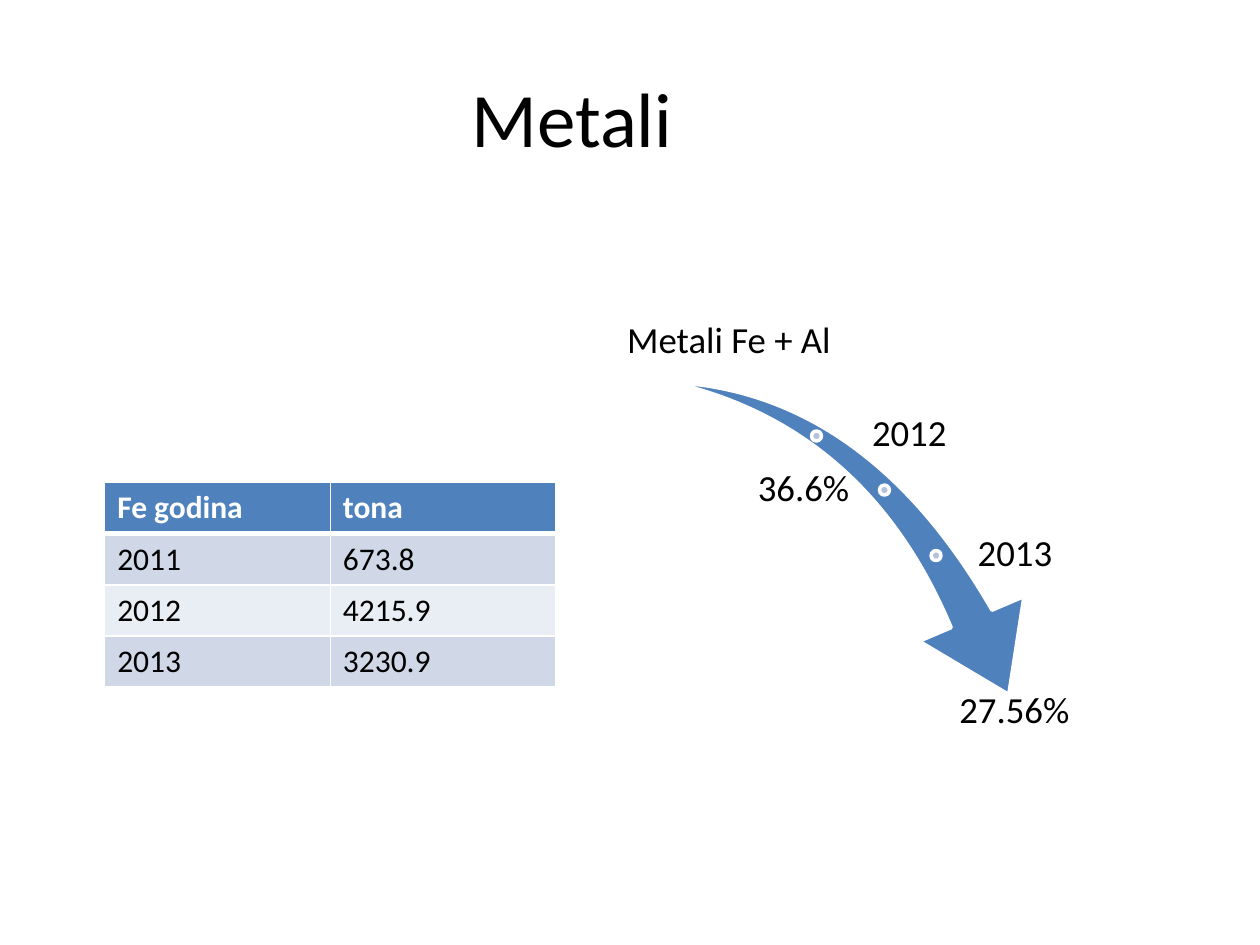
from lxml import etree
from pptx import Presentation
from pptx.dml.color import RGBColor
from pptx.enum.shapes import MSO_SHAPE as Shape
from pptx.enum.text import MSO_ANCHOR as Anchor, PP_ALIGN as Align
from pptx.oxml.ns import qn
from pptx.util import Cm, Pt

THEME = {
    "font": "Calibri",
    "title": 44, "label": 21, "cell": 18,
    "text": "000000", "white": "FFFFFF",
    "blue": "4F81BD", "dot": "B3C1DB",
    "bands": ("D0D8E8", "E9EDF4"),
}

TITLE = "Metali"
TABLE_ROWS = [
    ("Fe godina", "tona"),
    ("2011", "673.8"),
    ("2012", "4215.9"),
    ("2013", "3230.9"),
]
# Places are left, top, width, height in centimetres.
TITLE_PLACE = (1.27, 0.76, 20.52, 3.18)
TABLE_PLACE = (2.11, 9.73, 9.1, 4.12)
ARROW_PLACE = (13.36, 7.95, 7.98, 5.56)
ARROW_ROTATION = 73.3
ARROW_ADJUSTMENTS = (0.16, 0.31)
DOT_SIZE = 0.2
DOTS = [(16.36, 8.69), (17.73, 9.78), (18.77, 11.1)]
LABELS = [
    ("Metali Fe + Al", (10.44, 6.35, 8.51, 1.02), Align.CENTER, Anchor.BOTTOM),
    ("2012", (17.5, 8.03, 5.49, 1.47), Align.LEFT, Anchor.MIDDLE),
    ("36.6%", (12.83, 9.14, 4.37, 1.47), Align.RIGHT, Anchor.MIDDLE),
    ("2013", (19.63, 10.44, 3.35, 1.47), Align.LEFT, Anchor.MIDDLE),
    ("27.56%", (17.91, 13.87, 5.08, 1.47), Align.CENTER, Anchor.TOP),
]


def color(name):
    return RGBColor.from_string(THEME.get(name, name))


def lengths(place):
    return [Cm(value) for value in place]


def set_attributes(target, **values):
    for name, value in values.items():
        setattr(target, name, value)


def write(frame, text, size, text_color="text", bold=False, align=Align.LEFT):
    frame.text = text
    paragraph = frame.paragraphs[0]
    paragraph.alignment = align
    set_attributes(paragraph.font, name=THEME["font"], size=Pt(THEME[size]), bold=bold)
    paragraph.font.color.rgb = color(text_color)
    return paragraph


def add_filled_shape(slide, kind, place, fill):
    shape = slide.shapes.add_shape(kind, *lengths(place))
    shape.shadow.inherit = False
    shape.fill.solid()
    shape.fill.fore_color.rgb = color(fill)
    shape.line.color.rgb = color("white")
    shape.line.width = Pt(2)
    return shape


def add_label(slide, text, place, align, anchor):
    frame = slide.shapes.add_textbox(*lengths(place)).text_frame
    margins = {f"margin_{side}": Cm(0.08) for side in ("left", "top", "right", "bottom")}
    set_attributes(frame, word_wrap=True, vertical_anchor=anchor, **margins)
    write(frame, text, "label", align=align).line_spacing = 0.9


def set_borders(cell, widths):
    """Draw white borders; widths maps L, R, T and B to points."""
    properties = cell._tc.get_or_add_tcPr()
    for index, (side, width) in enumerate(widths.items()):
        line = etree.Element(qn(f"a:ln{side}"), w=str(Pt(width)))
        fill = etree.SubElement(line, qn("a:solidFill"))
        etree.SubElement(fill, qn("a:srgbClr"), val=THEME["white"])
        properties.insert(index, line)


def add_metal_table(slide):
    table = slide.shapes.add_table(
        len(TABLE_ROWS), len(TABLE_ROWS[0]), *lengths(TABLE_PLACE)).table
    for row, values in enumerate(TABLE_ROWS):
        header = row == 0
        fill = "blue" if header else THEME["bands"][(row - 1) % 2]
        for column, value in enumerate(values):
            cell = table.cell(row, column)
            cell.fill.solid()
            cell.fill.fore_color.rgb = color(fill)
            write(cell.text_frame, value, "cell", "white" if header else "text", header)
            set_borders(cell, {"L": 1, "R": 1, "T": 3 if row == 1 else 1,
                               "B": 3 if header else 1})


def main():
    presentation = Presentation()
    set_attributes(presentation, slide_width=Cm(25.4), slide_height=Cm(19.05))
    slide = presentation.slides.add_slide(presentation.slide_layouts[5])

    title = slide.shapes.title
    set_attributes(title, **dict(zip(("left", "top", "width", "height"), lengths(TITLE_PLACE))))
    title.text_frame.vertical_anchor = Anchor.MIDDLE
    write(title.text_frame, TITLE, "title", align=Align.CENTER)

    add_metal_table(slide)

    arrow = add_filled_shape(slide, Shape.SWOOSH_ARROW, ARROW_PLACE, "blue")
    arrow.rotation = ARROW_ROTATION
    for index, value in enumerate(ARROW_ADJUSTMENTS):
        arrow.adjustments[index] = value
    for left, top in DOTS:
        add_filled_shape(slide, Shape.OVAL, (left, top, DOT_SIZE, DOT_SIZE), "dot")
    for label in LABELS:
        add_label(slide, *label)

    presentation.save("out.pptx")


if __name__ == "__main__":
    main()
